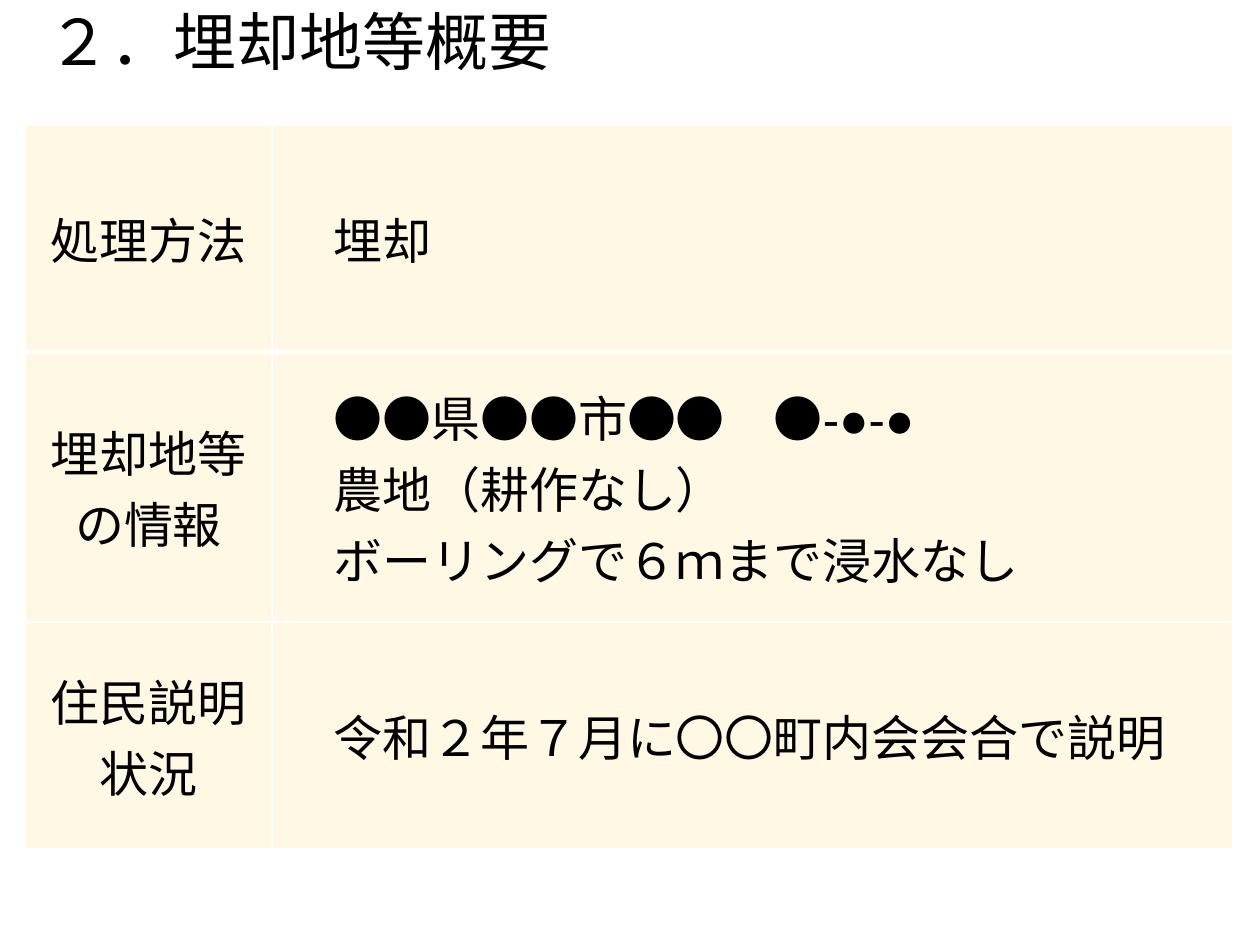
"""Build the burial site overview slide with its title and information table."""
from lxml import etree
from pptx import Presentation
from pptx.dml.color import RGBColor
from pptx.enum.text import MSO_ANCHOR, PP_ALIGN
from pptx.oxml.ns import qn
from pptx.util import Emu, Pt

MIDDLE = MSO_ANCHOR.MIDDLE
CENTER, LEFT = PP_ALIGN.CENTER, PP_ALIGN.LEFT
BLACK = RGBColor(0x00, 0x00, 0x00)
AMBER = RGBColor(0xFF, 0xC0, 0x00)
LATIN_FONT, ASIAN_FONT = "Arial", "Noto Sans CJK JP"
COLS = [247, 961]
ROWS = [227, 270, 227]
CELLS = [
    ["処理方法", "　埋却"],
    ["埋却地等の情報",
     "　●●県●●市●●　●-●-●\n　農地（耕作なし）\n　ボーリングで６ｍまで浸水なし"],
    ["住民説明\n状況", "　令和２年７月に〇〇町内会会合で説明"],
]


def px(n):
    return Emu(round(n * 914400 / 126))


def write(tf, text, size, align):
    tf.text = text
    for p in tf.paragraphs:
        p.alignment = align
        p.font.size = Pt(size)
        p.font.color.rgb = BLACK
        p.font.name = LATIN_FONT
        latin = p._p.pPr.find(qn("a:defRPr")).find(qn("a:latin"))
        ea = etree.Element(qn("a:ea"), typeface=ASIAN_FONT)
        latin.addnext(ea)


prs = Presentation()
prs.slide_width, prs.slide_height = px(1260), px(945)
s = prs.slides.add_slide(prs.slide_layouts[6])

frame = s.shapes.add_table(len(ROWS), len(COLS), px(25), px(125), px(sum(COLS)), px(sum(ROWS)))
table = frame.table
table.first_row = False
table.horz_banding = False
for col, width in zip(table.columns, COLS):
    col.width = px(width)
for row, height in zip(table.rows, ROWS):
    row.height = px(height)

for i, texts in enumerate(CELLS):
    for j, text in enumerate(texts):
        cell = table.cell(i, j)
        cell.vertical_anchor = MIDDLE
        write(cell.text_frame, text, 28, LEFT if j else CENTER)
        cell.fill.solid()
        cell.fill.fore_color.rgb = AMBER
        tcPr = cell._tc.tcPr
        color = tcPr.find(qn("a:solidFill")).find(qn("a:srgbClr"))
        etree.SubElement(color, qn("a:alpha"), val="10000")
        for k, side in enumerate("LRTB"):
            thick = (i, side) in [(0, "B"), (1, "T")]
            ln = etree.Element(qn(f"a:ln{side}"), w=str(Pt(3 if thick else 1)))
            line_fill = etree.SubElement(ln, qn("a:solidFill"))
            etree.SubElement(line_fill, qn("a:srgbClr"), val="FFFFFF")
            tcPr.insert(k, ln)

title = s.shapes.add_textbox(px(35), px(-4), px(774), px(89))
title.text_frame.word_wrap = True
write(title.text_frame, "２．埋却地等概要", 36, LEFT)

prs.save("out.pptx")
